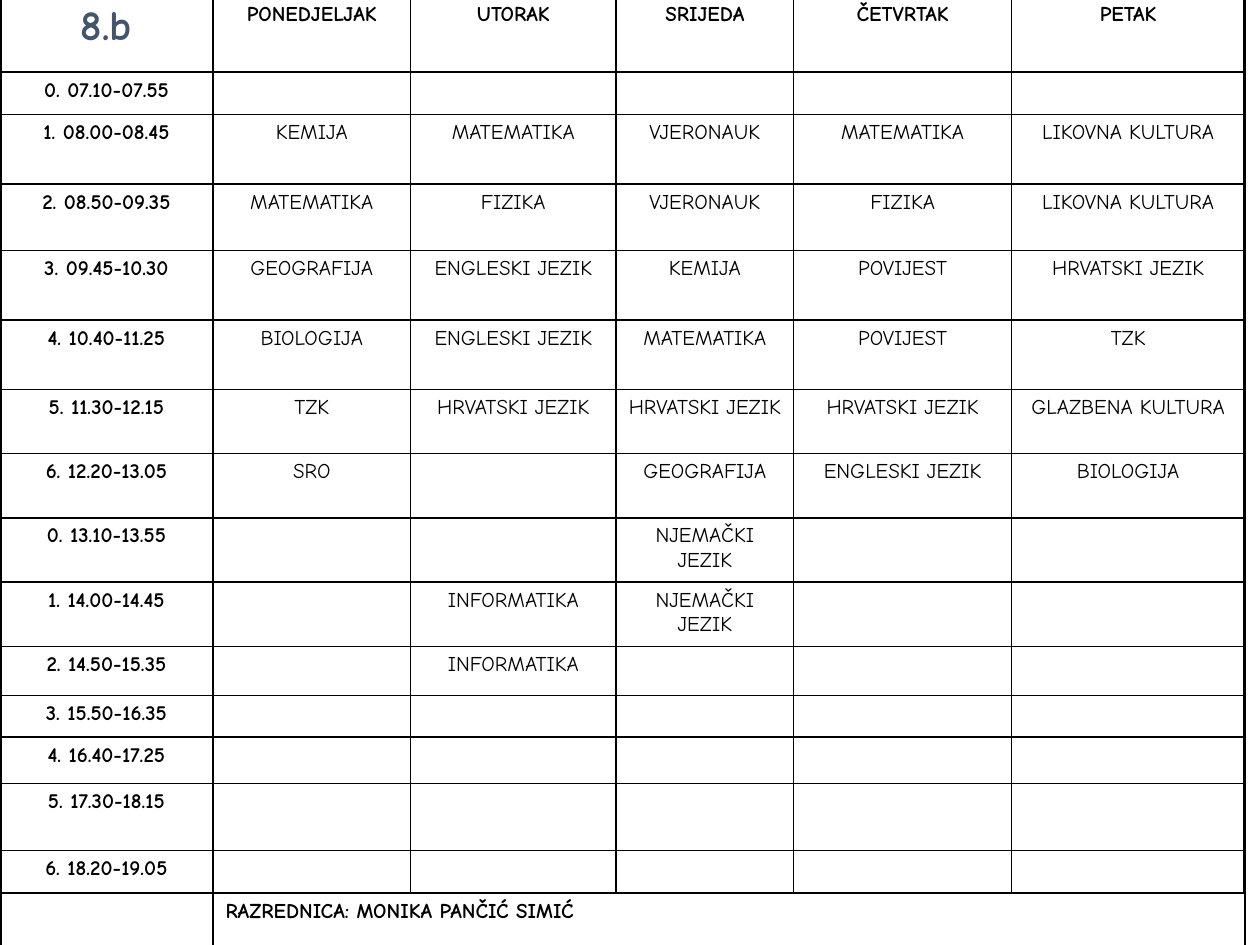
from lxml import etree
from pptx import Presentation
from pptx.dml.color import RGBColor
from pptx.enum.text import PP_ALIGN
from pptx.oxml.ns import qn
from pptx.util import Inches, Pt

CENTER, LEFT = PP_ALIGN.CENTER, PP_ALIGN.LEFT
FONT = "Comic Neue"
COLORS = {"text": "000000", "class": "44546A", "border": "000000"}
THIN, THICK = 1, 2.25

COLUMN_WIDTHS = [1.69, 1.57, 1.63, 1.41, 1.73, 1.85]
ROW_HEIGHTS = [0.6, 0.34, 0.55, 0.53, 0.55, 0.55, 0.51, 0.51,
               0.51, 0.51, 0.39, 0.33, 0.37, 0.53, 0.34, 0.43]

DAYS = ["PONEDJELJAK", "UTORAK", "SRIJEDA", "ČETVRTAK", "PETAK"]
NO_LESSONS = [""] * len(DAYS)
LESSONS = [
    ("0. 07.10-07.55", NO_LESSONS),
    ("1. 08.00-08.45", ["KEMIJA", "MATEMATIKA", "VJERONAUK", "MATEMATIKA", "LIKOVNA KULTURA"]),
    ("2. 08.50-09.35", ["MATEMATIKA", "FIZIKA", "VJERONAUK", "FIZIKA", "LIKOVNA KULTURA"]),
    ("3. 09.45-10.30", ["GEOGRAFIJA", "ENGLESKI JEZIK", "KEMIJA", "POVIJEST", "HRVATSKI JEZIK"]),
    ("4. 10.40-11.25", ["BIOLOGIJA", "ENGLESKI JEZIK", "MATEMATIKA", "POVIJEST", "TZK"]),
    ("5. 11.30-12.15", ["TZK", "HRVATSKI JEZIK", "HRVATSKI JEZIK", "HRVATSKI JEZIK",
                        "GLAZBENA KULTURA"]),
    ("6. 12.20-13.05", ["SRO", "", "GEOGRAFIJA", "ENGLESKI JEZIK", "BIOLOGIJA"]),
    ("0. 13.10-13.55", ["", "", "NJEMAČKI JEZIK", "", ""]),
    ("1. 14.00-14.45", ["", "INFORMATIKA", "NJEMAČKI JEZIK", "", ""]),
    ("2. 14.50-15.35", ["", "INFORMATIKA", "", "", ""]),
    ("3. 15.50-16.35", NO_LESSONS),
    ("4. 16.40-17.25", NO_LESSONS),
    ("5. 17.30-18.15", NO_LESSONS),
    ("6. 18.20-19.05", NO_LESSONS),
]


def write_text(cell, text, size=12, bold=False, color="text", align=CENTER):
    paragraph = cell.text_frame.paragraphs[0]
    paragraph.alignment = align
    if not text:
        # An empty cell keeps the text size, so that its row stays low
        etree.SubElement(paragraph._p, qn("a:endParaRPr"), sz=str(size * 100))
        return
    run = paragraph.add_run()
    run.text = text
    run.font.name = FONT
    run.font.size = Pt(size)
    run.font.bold = bold
    run.font.color.rgb = RGBColor.from_string(COLORS[color])


def set_border(cell, side, width):
    line = etree.SubElement(cell._tc.get_or_add_tcPr(), qn(f"a:ln{side}"), w=str(Pt(width)))
    fill = etree.SubElement(line, qn("a:solidFill"))
    etree.SubElement(fill, qn("a:srgbClr"), val=COLORS["border"])


def format_grid(table):
    last_row, last_column = len(ROW_HEIGHTS) - 1, len(COLUMN_WIDTHS) - 1
    for row in range(last_row + 1):
        for column in range(last_column + 1):
            cell = table.cell(row, column)
            outer_sides = {"L": column == 0, "R": column == last_column,
                           "T": row == 0, "B": row == last_row}
            for side, is_outer in outer_sides.items():
                set_border(cell, side, THICK if is_outer else THIN)
            cell.fill.background()


def add_timetable(slide):
    table = slide.shapes.add_table(
        len(ROW_HEIGHTS), len(COLUMN_WIDTHS), Inches(0), Inches(-0.03),
        Inches(sum(COLUMN_WIDTHS)), Inches(sum(ROW_HEIGHTS))).table
    table.first_row = table.horz_banding = False
    for column, width in zip(table.columns, COLUMN_WIDTHS):
        column.width = Inches(width)
    for row, height in zip(table.rows, ROW_HEIGHTS):
        row.height = Inches(height)
    format_grid(table)
    return table


def fill_timetable(table):
    # Class and days
    write_text(table.cell(0, 0), "8.b", size=24, bold=True, color="class")
    for column, day in enumerate(DAYS, 1):
        write_text(table.cell(0, column), day, bold=True)

    # Lesson times and subjects
    for row, (time, subjects) in enumerate(LESSONS, 1):
        write_text(table.cell(row, 0), time, bold=True)
        for column, subject in enumerate(subjects, 1):
            write_text(table.cell(row, column), subject)

    # Class teacher
    footer = len(ROW_HEIGHTS) - 1
    write_text(table.cell(footer, 0), "")
    teacher = table.cell(footer, 1)
    teacher.merge(table.cell(footer, len(DAYS)))
    write_text(teacher, "RAZREDNICA: MONIKA PANČIĆ SIMIĆ", bold=True, align=LEFT)


def main():
    presentation = Presentation()
    presentation.slide_width, presentation.slide_height = Inches(10), Inches(7.5)
    slide = presentation.slides.add_slide(presentation.slide_layouts[6])
    fill_timetable(add_timetable(slide))
    presentation.save("out.pptx")


if __name__ == "__main__":
    main()
